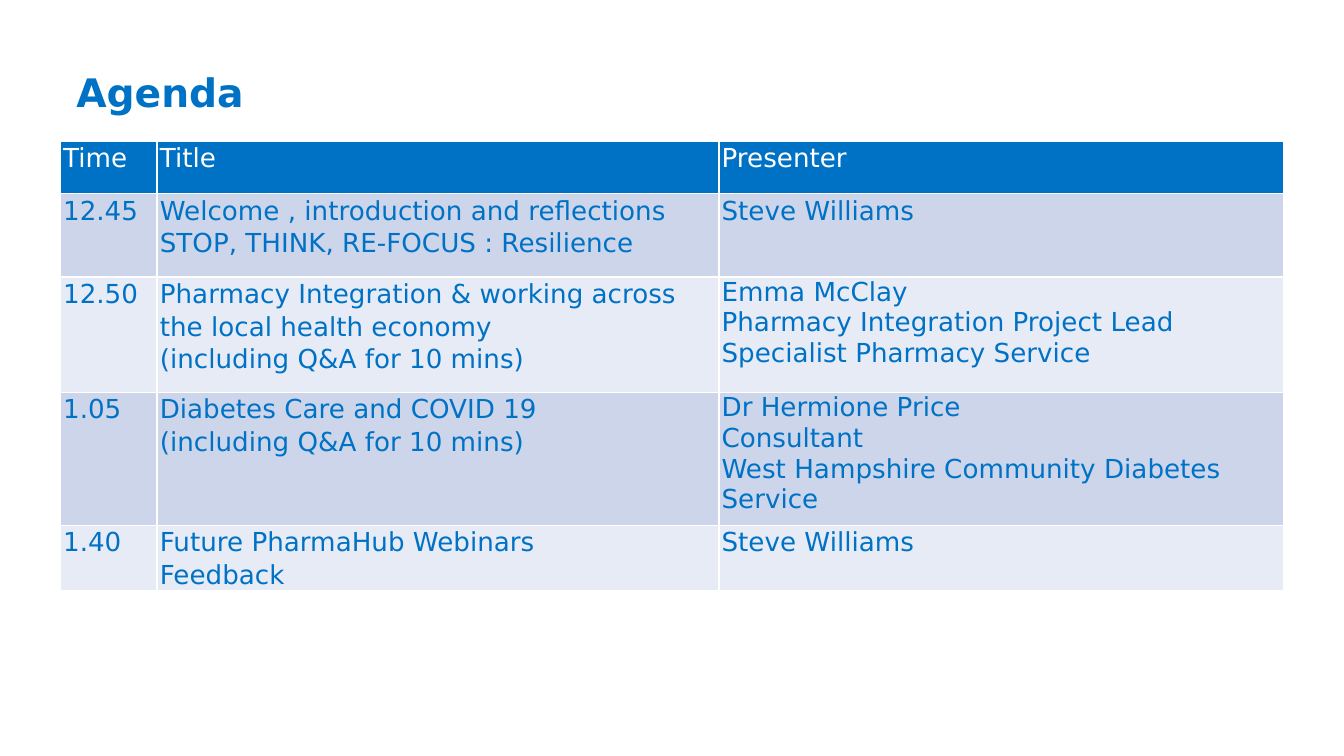
from pptx import Presentation
from pptx.dml.color import RGBColor as Rgb
from pptx.enum.text import MSO_ANCHOR as Anchor
from pptx.util import Inches, Pt

FONT = "DejaVu Sans"
COLORS = {"blue": "0072C6", "white": "FFFFFF", "dark": "CCD5EA", "light": "E7EBF5"}
TITLE = "Agenda"
AGENDA = [
    (["Time"], ["Title"], ["Presenter"]),
    (["12.45"],
     ["Welcome , introduction and reflections", "STOP, THINK, RE-FOCUS : Resilience"],
     ["Steve Williams"]),
    (["12.50"],
     ["Pharmacy Integration & working across the local health economy",
      "(including Q&A for 10 mins)"],
     ["Emma McClay", "Pharmacy Integration Project Lead", "Specialist Pharmacy Service"]),
    (["1.05"],
     ["Diabetes Care and COVID 19", "(including Q&A for 10 mins)"],
     ["Dr Hermione Price", "Consultant", "West Hampshire Community Diabetes Service"]),
    (["1.40"], ["Future PharmaHub Webinars", "Feedback"], ["Steve Williams"]),
]
WIDTHS = [0.72, 4.18, 4.2]
HEIGHTS = [0.39, 0.62, 0.86, 0.99, 0.44]


def write(frame, lines, size, color, space=None, bold=False):
    for i, line in enumerate(lines):
        para = frame.paragraphs[0] if i == 0 else frame.add_paragraph()
        para.line_spacing = space
        run = para.add_run()
        run.text = line
        font = run.font
        font.name, font.size, font.bold = FONT, Pt(size), bold
        font.color.rgb = Rgb.from_string(COLORS[color])


deck = Presentation()
deck.slide_width = Inches(10)
deck.slide_height = deck.slide_width * 9 // 16
slide = deck.slides.add_slide(deck.slide_layouts[6])

table = slide.shapes.add_table(
    len(HEIGHTS), len(WIDTHS), Inches(0.45), Inches(1.05),
    Inches(sum(WIDTHS)), Inches(sum(HEIGHTS))).table
for col, width in zip(table.columns, WIDTHS):
    col.width = Inches(width)
for r, (row, height) in enumerate(zip(AGENDA, HEIGHTS)):
    table.rows[r].height = Inches(height)
    head = r == 0
    back = "blue" if head else ("light", "dark")[r % 2]
    for c, lines in enumerate(row):
        cell = table.cell(r, c)
        cell.margin_left = cell.margin_right = Inches(0.02)
        cell.margin_top = cell.margin_bottom = 0
        cell.fill.solid()
        cell.fill.fore_color.rgb = Rgb.from_string(COLORS[back])
        space = None if len(lines) > 2 else 1.07
        write(cell.text_frame, lines, 14, "white" if head else "blue", space)

box = slide.shapes.add_textbox(Inches(0.47), Inches(0.14), Inches(8.41), Inches(0.77))
frame = box.text_frame
frame.word_wrap = True
frame.vertical_anchor = Anchor.BOTTOM
write(frame, [TITLE], 21, "blue", 0.9, True)

deck.save("out.pptx")
